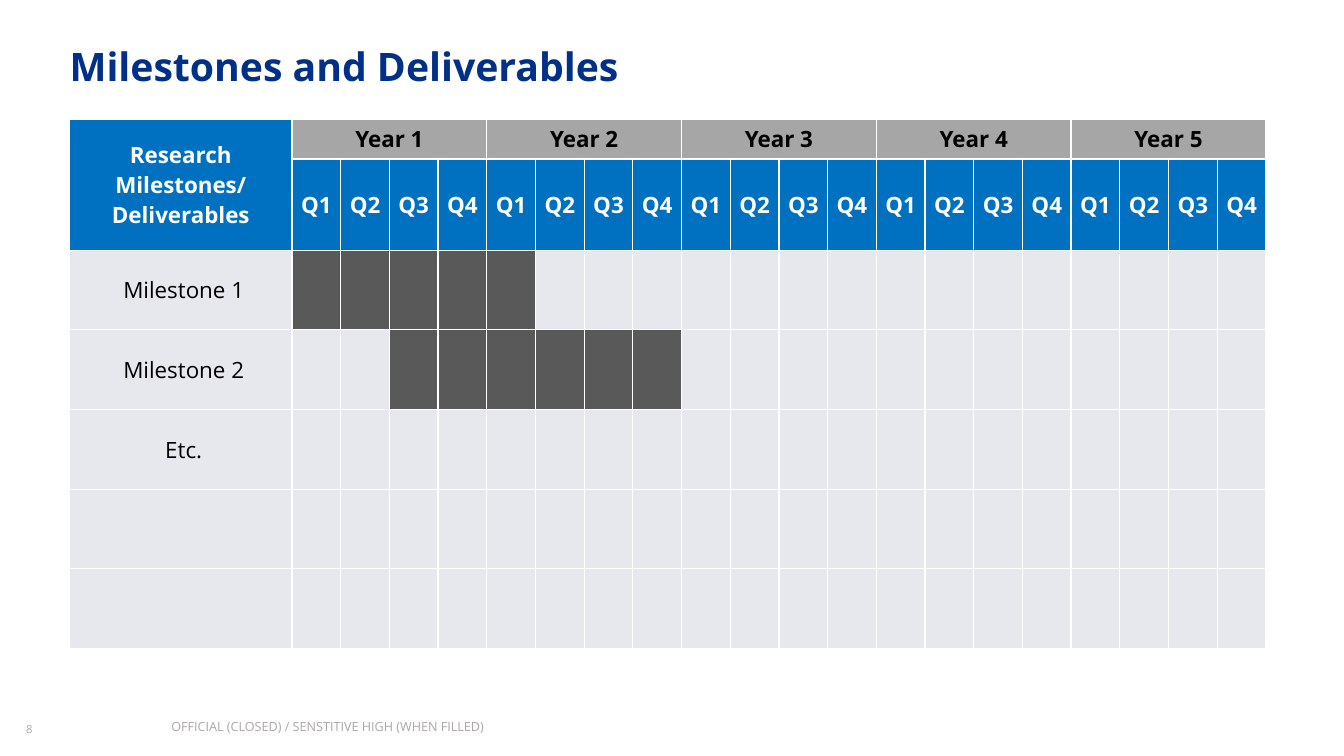
from lxml import etree
from pptx import Presentation
from pptx.dml.color import RGBColor
from pptx.enum import text
from pptx.oxml import ns
from pptx.util import Pt

TITLE = "Milestones and Deliverables"
HEADING = ["Research", "Milestones/", "Deliverables"]
YEARS = ["Year 1", "Year 2", "Year 3", "Year 4", "Year 5"]
QUARTERS = ["Q1", "Q2", "Q3", "Q4"]
MILESTONES = [
    (" Milestone 1", range(1, 6)),
    (" Milestone 2", range(3, 9)),
    (" Etc.", range(0)),
    ("", range(0)),
    ("", range(0)),
]
PAGE_NUMBER = "8"
MARKING = "OFFICIAL (CLOSED) / SENSTITIVE HIGH (WHEN FILLED)"

FONT = "Open Sans"
NAVY, BLUE, GREY, PALE, DARK = "003087", "0070C0", "A6A6A6", "E7E8ED", "595959"
WHITE, BLACK, FOOTER_GREY = "FFFFFF", "000000", "767171"
LABEL_WIDTH, QUARTER_WIDTH = 158.9, 34.8
YEAR_HEIGHT, ROW_HEIGHT = 28.3, 56.9


def color(value):
    return RGBColor.from_string(value)


def add_run(paragraph, words, size, fill, bold=False):
    run = paragraph.add_run()
    run.text = words
    run.font.name, run.font.size, run.font.bold = FONT, Pt(size), bold
    run.font.color.rgb = color(fill)
    return run


def set_frame(frame, anchor, bottom=0):
    frame.margin_left = frame.margin_right = frame.margin_top = 0
    frame.margin_bottom = Pt(bottom)
    frame.word_wrap = True
    frame.auto_size = text.MSO_AUTO_SIZE.NONE
    frame.vertical_anchor = anchor


def add_footer(slide, words, left, width, size, anchor, bottom=0, spacing=1.0):
    box = slide.shapes.add_textbox(Pt(left), Pt(513.4), Pt(width), Pt(13.7))
    set_frame(box.text_frame, anchor, bottom)
    paragraph = box.text_frame.paragraphs[0]
    paragraph.line_spacing = spacing
    run = add_run(paragraph, words, size, FOOTER_GREY)
    tint = run.font._element.find(".//" + ns.qn("a:srgbClr"))
    etree.SubElement(tint, ns.qn("a:alpha"), val="61000")


def style_cell(cell, fill):
    properties = cell._tc.get_or_add_tcPr()
    for side in ("lnL", "lnR", "lnT", "lnB"):
        line = etree.SubElement(properties, ns.qn("a:" + side), w="12700")
        solid = etree.SubElement(line, ns.qn("a:solidFill"))
        etree.SubElement(solid, ns.qn("a:srgbClr"), val=WHITE)
    cell.fill.solid()
    cell.fill.fore_color.rgb = color(fill)
    cell.margin_left = cell.margin_right = Pt(5)
    cell.margin_top = cell.margin_bottom = 0
    cell.vertical_anchor = text.MSO_ANCHOR.MIDDLE


def write_cell(cell, lines, fill, bold=True):
    frame = cell.text_frame
    for index, line in enumerate(lines):
        paragraph = frame.add_paragraph() if index else frame.paragraphs[0]
        paragraph.alignment = text.PP_ALIGN.CENTER
        add_run(paragraph, line, 16, fill, bold)


def add_schedule(slide):
    quarters = QUARTERS * len(YEARS)
    row_count, column_count = len(MILESTONES) + 2, len(quarters) + 1
    width = LABEL_WIDTH + QUARTER_WIDTH * len(quarters)
    height = YEAR_HEIGHT + ROW_HEIGHT * (row_count - 1)
    table = slide.shapes.add_table(
        row_count, column_count, Pt(49.7), Pt(85.3), Pt(width), Pt(height)
    ).table
    table.first_row = table.horz_banding = False
    for index, column in enumerate(table.columns):
        column.width = Pt(QUARTER_WIDTH if index else LABEL_WIDTH)
    for index, row in enumerate(table.rows):
        row.height = Pt(ROW_HEIGHT if index else YEAR_HEIGHT)

    for column in range(column_count):
        style_cell(table.cell(0, column), GREY if column else BLUE)
        style_cell(table.cell(1, column), BLUE)
    for row, (label, active) in enumerate(MILESTONES, 2):
        for column in range(column_count):
            style_cell(table.cell(row, column), DARK if column in active else PALE)
        if label:
            write_cell(table.cell(row, 0), [label], BLACK, bold=False)

    table.cell(0, 0).merge(table.cell(1, 0))
    write_cell(table.cell(0, 0), HEADING, WHITE)
    for index, year in enumerate(YEARS):
        first = 1 + index * len(QUARTERS)
        table.cell(0, first).merge(table.cell(0, first + len(QUARTERS) - 1))
        write_cell(table.cell(0, first), [year], BLACK)
    for column, quarter in enumerate(quarters, 1):
        write_cell(table.cell(1, column), [quarter], WHITE)


def main():
    presentation = Presentation()
    presentation.slide_width, presentation.slide_height = Pt(960), Pt(540)
    slide = presentation.slides.add_slide(presentation.slide_layouts[5])
    title = slide.shapes.title
    title.left, title.top, title.width, title.height = Pt(49.7), Pt(26.6), Pt(793.4), Pt(37.4)
    set_frame(title.text_frame, text.MSO_ANCHOR.MIDDLE)
    paragraph = title.text_frame.paragraphs[0]
    paragraph.alignment = text.PP_ALIGN.LEFT
    paragraph.line_spacing = 1.1
    add_run(paragraph, TITLE, 28, NAVY, bold=True)
    add_schedule(slide)
    add_footer(slide, PAGE_NUMBER, 18.7, 56.9, 8, text.MSO_ANCHOR.MIDDLE, spacing=1.1)
    add_footer(slide, MARKING, 122.4, 383.8, 9, text.MSO_ANCHOR.TOP, bottom=3.6)
    presentation.save("out.pptx")


if __name__ == "__main__":
    main()
